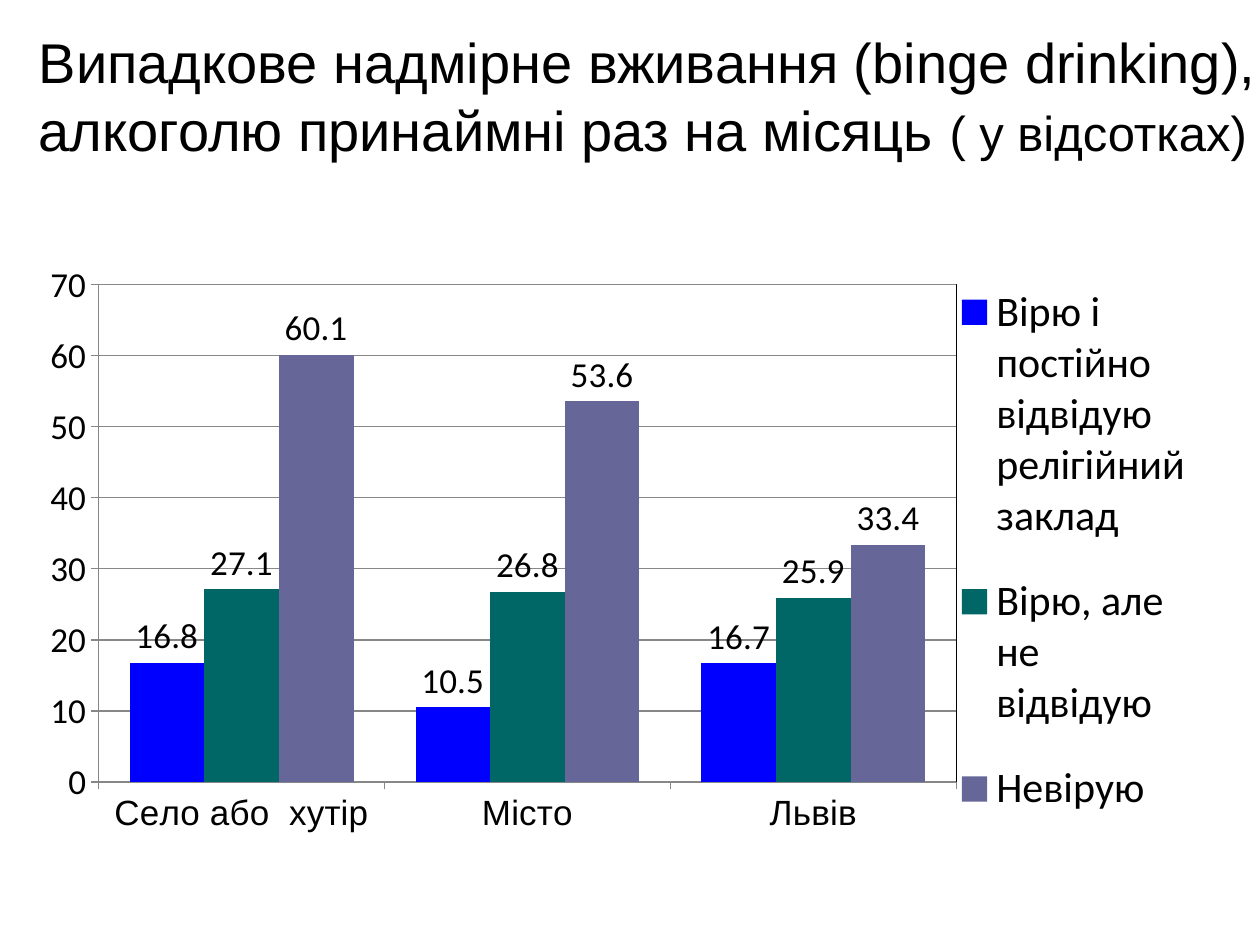
import pptx
import pptx.util
import pptx.oxml
import pptx.chart.data
import pptx.dml.color
import pptx.enum.chart
import pptx.enum.text
from pptx.oxml.ns import qn

Inches, Pt = pptx.util.Inches, pptx.util.Pt
XL = pptx.enum.chart

# Content
COLORS = {"text": "000000", "axis": "878787"}
TITLE = [
    ("Випадкове надмірне вживання (binge drinking), алкоголю принаймні раз на місяць ", 32),
    ("( у відсотках)", 28),
]
CATEGORIES = ["Село або  хутір", "Місто", "Львів"]
SERIES = [
    ("Вірю і постійно відвідую релігійний заклад ", [16.8, 10.5, 16.7], "0000FF"),
    ("Вірю, але не відвідую  ", [27.1, 26.8, 25.9], "006666"),
    ("Невірую", [60.1, 53.6, 33.4], "666699"),
]
# Shares of the chart frame: left, top, width, height
PLOT_AREA = (0.061, 0.163, 0.725, 0.677)
LEGEND_AREA = (0.785, 0.12, 0.2, 0.81)
NAMESPACES = ('xmlns:c="http://schemas.openxmlformats.org/drawingml/2006/chart" '
              'xmlns:a="http://schemas.openxmlformats.org/drawingml/2006/main"')


def rgb(value):
    return pptx.dml.color.RGBColor.from_string(value)


def style_font(font, size, name="Calibri"):
    font.size = Pt(size)
    font.name = name
    font.bold = False
    font.color.rgb = rgb(COLORS["text"])


def style_line(line, color):
    line.color.rgb = rgb(color)
    line.width = Pt(0.75)


def set_layout(parent, position, area, inner=False):
    """Give a chart part a fixed place inside the chart frame."""
    for old in parent.findall(qn("c:layout")):
        parent.remove(old)
    target = '<c:layoutTarget val="inner"/>' if inner else ""
    modes = "".join(f'<c:{axis}Mode val="edge"/>' for axis in "xy")
    values = "".join(f'<c:{key} val="{value}"/>' for key, value in zip("xywh", area))
    parent.insert(position, pptx.oxml.parse_xml(
        f"<c:layout {NAMESPACES}><c:manualLayout>{target}{modes}{values}"
        "</c:manualLayout></c:layout>"))


deck = pptx.Presentation()
deck.slide_width, deck.slide_height = Inches(10), Inches(7.5)
page = deck.slides.add_slide(deck.slide_layouts[6])

# Title
box = page.shapes.add_textbox(Inches(0.21), Inches(0.52), Inches(10.14), Inches(0.47))
frame = box.text_frame
frame.word_wrap = True
frame.vertical_anchor = pptx.enum.text.MSO_ANCHOR.MIDDLE
for text, size in TITLE:
    span = frame.paragraphs[0].add_run()
    span.text = text
    style_font(span.font, size, "Arial")

# Chart
data = pptx.chart.data.CategoryChartData()
data.categories = CATEGORIES
for name, values, _ in SERIES:
    data.add_series(name, values)
chart = page.shapes.add_chart(
    XL.XL_CHART_TYPE.COLUMN_CLUSTERED,
    Inches(0.21), Inches(1.31), Inches(9.39), Inches(5.83), data).chart
chart.has_title = False
style_font(chart.font, 18)

# Columns and their labels
plot = chart.plots[0]
plot.gap_width = 83
plot.overlap = 0
plot.vary_by_categories = False
for series, (_, _, color) in zip(plot.series, SERIES):
    series.format.fill.solid()
    series.format.fill.fore_color.rgb = rgb(color)
    labels = series.data_labels
    labels.show_value = True
    labels.position = XL.XL_LABEL_POSITION.OUTSIDE_END
    style_font(labels.font, 20)

# Axes
for axis, font_name in ((chart.category_axis, "Arial"), (chart.value_axis, "Calibri")):
    axis.major_tick_mark = XL.XL_TICK_MARK.OUTSIDE
    axis.minor_tick_mark = XL.XL_TICK_MARK.NONE
    style_font(axis.tick_labels.font, 20, font_name)
    style_line(axis.format.line, COLORS["axis"])
chart.value_axis.minimum_scale = 0
chart.value_axis.maximum_scale = 70
chart.value_axis.major_unit = 10
chart.value_axis.has_major_gridlines = True
style_line(chart.value_axis.major_gridlines.format.line, COLORS["axis"])

# Legend
chart.has_legend = True
legend = chart.legend
legend.position = XL.XL_LEGEND_POSITION.RIGHT
legend.include_in_layout = False
style_font(legend.font, 24)

# Fixed places and the frame around the plot
plot_area = chart.element.find(".//" + qn("c:plotArea"))
set_layout(plot_area, 0, PLOT_AREA, inner=True)
set_layout(chart.element.find(".//" + qn("c:legend")), 1, LEGEND_AREA)
plot_area.append(pptx.oxml.parse_xml(
    f'<c:spPr {NAMESPACES}><a:noFill/><a:ln w="9525"><a:solidFill>'
    f'<a:srgbClr val="{COLORS["text"]}"/></a:solidFill></a:ln></c:spPr>'))

deck.save("out.pptx")
